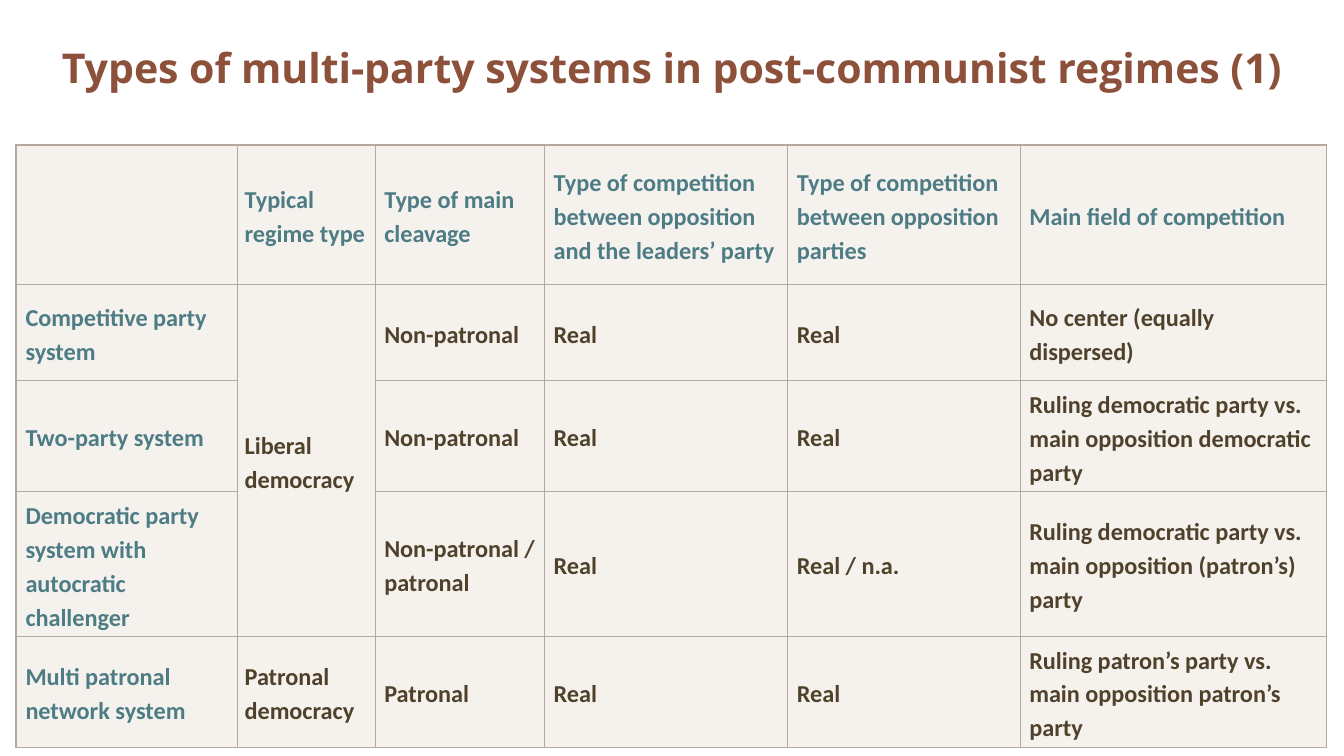
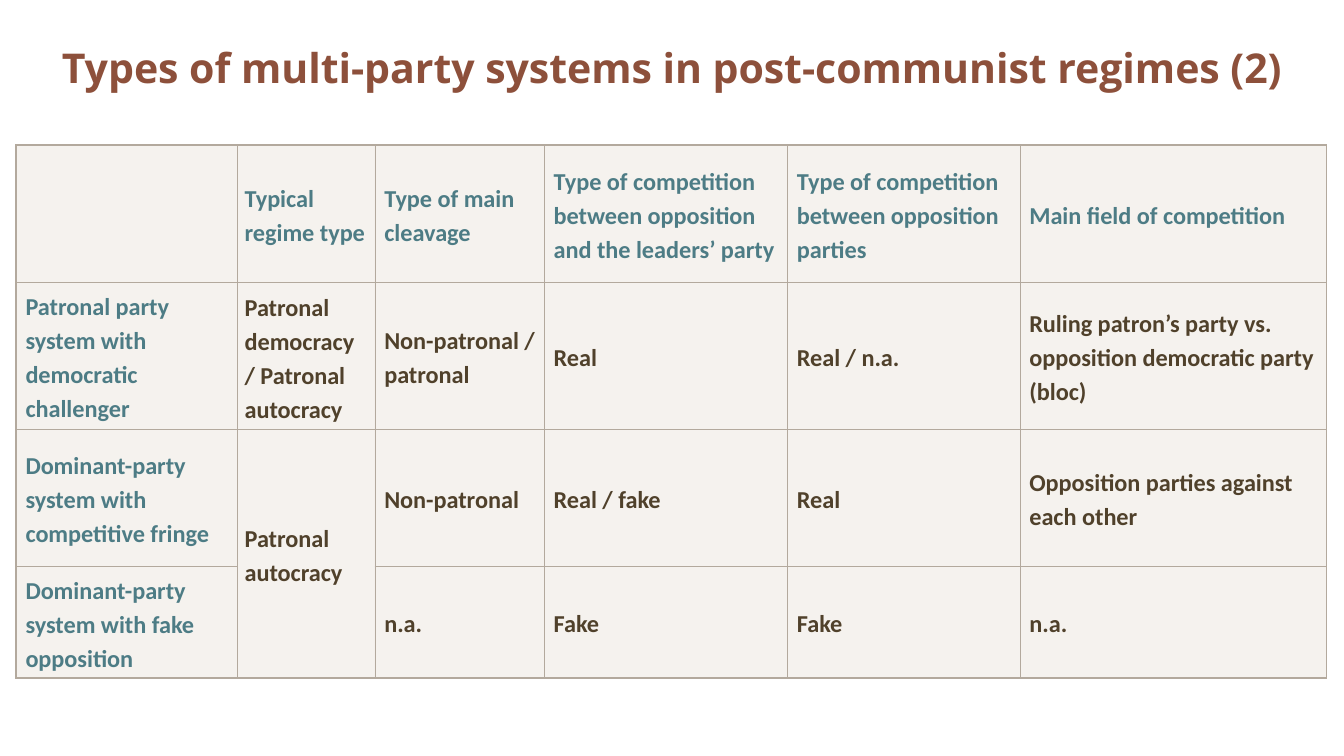
from dataclasses import dataclass

from lxml import etree
from pptx import Presentation
from pptx.dml.color import RGBColor
from pptx.enum.text import MSO_ANCHOR, PP_ALIGN
from pptx.oxml.ns import qn
from pptx.util import Inches, Pt

CENTER, LEFT = PP_ALIGN.CENTER, PP_ALIGN.LEFT
MIDDLE = MSO_ANCHOR.MIDDLE

# Shared look
RUST = RGBColor(0x8D, 0x50, 0x3B)
TEAL = RGBColor(0x4D, 0x7C, 0x85)
BROWN = RGBColor(0x50, 0x41, 0x2B)
SAND = RGBColor(0xEF, 0xEA, 0xE4)
BORDER = RGBColor(0xB3, 0xA9, 0x9D)
WHITE = RGBColor(0xFF, 0xFF, 0xFF)
TITLE_FONT, BODY_FONT = "Open Sans", "Calibri"
SAND_ALPHA = 60
OUTER, INNER = Pt(1), Pt(0.5)
PLAIN_STYLE = "{2D5ABB26-0587-4C30-8999-92F81FD0307C}"

SLIDE_W = Inches(10)
SLIDE_H = SLIDE_W * 9 // 16
MARGIN, CONTENT_W = Inches(0.12), Inches(9.76)
TABLE_TOP = Inches(1.08)
COL_WIDTHS = (1.65, 1.02, 1.26, 1.81, 1.73, 2.28)
REGIME_COL = 1
TITLE = "Types of multi-party systems in post-communist regimes ({})"
HEADER = (
    "", "Typical regime type", "Type of main cleavage",
    "Type of competition between opposition and the leaders’ party",
    "Type of competition between opposition parties",
    "Main field of competition",
)


@dataclass(frozen=True)
class PartySystem:
    name: str
    regime: str | None  # None continues the regime of the row above
    cleavage: str
    leaders: str
    opposition: str
    field: str
    height: float

    def texts(self) -> tuple:
        return (self.name, self.regime, self.cleavage, self.leaders,
                self.opposition, self.field)


@dataclass(frozen=True)
class TableSlide:
    table_height: float
    header_height: float
    systems: tuple[PartySystem, ...]


SLIDES = (
    TableSlide(4.45, 1.04, (
        PartySystem("Competitive party system", "Liberal democracy",
                    "Non-patronal", "Real", "Real",
                    "No center (equally dispersed)", 0.71),
        PartySystem("Two-party system", None, "Non-patronal", "Real", "Real",
                    "Ruling democratic party vs. main opposition democratic party",
                    0.81),
        PartySystem("Democratic party system with autocratic challenger", None,
                    "Non-patronal / patronal", "Real", "Real / n.a.",
                    "Ruling democratic party vs. main opposition (patron’s) party",
                    1.05),
        PartySystem("Multi patronal network system", "Patronal democracy",
                    "Patronal", "Real", "Real",
                    "Ruling patron’s party vs. main opposition patron’s party",
                    0.81),
    )),
    TableSlide(3.96, 1.02, (
        PartySystem("Patronal party system with democratic challenger",
                    "Patronal democracy / Patronal autocracy",
                    "Non-patronal / patronal", "Real", "Real / n.a.",
                    "Ruling patron’s party vs. opposition democratic party (bloc)",
                    1.02),
        PartySystem("Dominant-party system with competitive fringe",
                    "Patronal autocracy", "Non-patronal", "Real / fake", "Real",
                    "Opposition parties against each other", 1.02),
        PartySystem("Dominant-party system with fake opposition", None,
                    "n.a.", "Fake", "Fake", "n.a.", 0.78),
    )),
)


def write(tf, text: str, *, font: str, size: float, color: RGBColor,
          align=LEFT, spacing: float = 1.0) -> None:
    """Put one bold paragraph into a text frame."""
    tf.word_wrap = True
    p = tf.paragraphs[0]
    p.alignment, p.line_spacing = align, spacing
    r = p.add_run()
    r.text = text
    r.font.name, r.font.size, r.font.bold = font, Pt(size), True
    r.font.color.rgb = color


def add_title(s, text: str) -> None:
    sp = s.shapes.add_textbox(MARGIN, 0, CONTENT_W, Inches(1))
    sp.text_frame.vertical_anchor = MIDDLE
    write(sp.text_frame, text, font=TITLE_FONT, size=22, color=RUST, align=CENTER)


def style_cell(cell, borders: dict[str, int]) -> None:
    """Give a cell its translucent fill and its borders, keyed by L, R, T, B."""
    cell.fill.solid()
    cell.fill.fore_color.rgb = SAND
    tc_pr = cell._tc.get_or_add_tcPr()
    fill_color = tc_pr.find(f"{qn('a:solidFill')}/{qn('a:srgbClr')}")
    etree.SubElement(fill_color, qn("a:alpha"), val=str(SAND_ALPHA * 1000))
    for i, (side, width) in enumerate(borders.items()):
        ln = etree.Element(qn(f"a:ln{side}"), w=str(width))
        fill = etree.SubElement(ln, qn("a:solidFill"))
        etree.SubElement(fill, qn("a:srgbClr"), val=str(BORDER))
        tc_pr.insert(i, ln)


def fill_cell(cell, text: str, color: RGBColor, is_regime: bool) -> None:
    side, edge = (0.05, 0.05) if is_regime else (0.07, 0.04)
    cell.margin_left = cell.margin_right = Inches(side)
    cell.margin_top = cell.margin_bottom = Inches(edge)
    cell.vertical_anchor = MIDDLE
    if text:
        write(cell.text_frame, text, font=BODY_FONT, size=13, color=color,
              spacing=1.15)


def add_systems_table(s, content: TableSlide) -> None:
    rows = [HEADER] + [system.texts() for system in content.systems]
    heights = [content.header_height] + [system.height for system in content.systems]
    n_rows, n_cols = len(rows), len(HEADER)
    table_h = Inches(content.table_height)
    frame = s.shapes.add_table(n_rows, n_cols, MARGIN, TABLE_TOP, CONTENT_W, table_h)
    table = frame.table
    table.first_row = table.horz_banding = False
    table._tbl.tblPr.find(qn("a:tableStyleId")).text = PLAIN_STYLE
    for column, width in zip(table.columns, COL_WIDTHS):
        column.width = Inches(width)
    for row, height in zip(table.rows, heights):
        row.height = Inches(height)
    # Sizing rows and columns resizes the frame, so set it last
    frame.width, frame.height = CONTENT_W, table_h

    # Join each regime cell with the rows that continue it
    for r, texts in enumerate(rows):
        end = r
        while end + 1 < n_rows and rows[end + 1][REGIME_COL] is None:
            end += 1
        if end > r and texts[REGIME_COL] is not None:
            table.cell(r, REGIME_COL).merge(table.cell(end, REGIME_COL))

    for r, texts in enumerate(rows):
        for c, text in enumerate(texts):
            cell = table.cell(r, c)
            last_row = r + (cell.span_height if cell.is_merge_origin else 1)
            borders = {
                "L": OUTER if c == 0 else INNER,
                "R": OUTER if c == n_cols - 1 else INNER,
                "T": OUTER if r == 0 else INNER,
                "B": OUTER if last_row == n_rows else INNER,
            }
            if text is None:
                del borders["T"]
                if r + 1 < n_rows and rows[r + 1][c] is None:
                    del borders["B"]
            style_cell(cell, borders)
            if text is not None:
                fill_cell(cell, text, TEAL if r == 0 or c == 0 else BROWN,
                          c == REGIME_COL)


def main() -> None:
    prs = Presentation()
    prs.slide_width, prs.slide_height = SLIDE_W, SLIDE_H
    for number, content in enumerate(SLIDES, start=1):
        s = prs.slides.add_slide(prs.slide_layouts[6])
        s.background.fill.solid()
        s.background.fill.fore_color.rgb = WHITE
        add_title(s, TITLE.format(number))
        add_systems_table(s, content)
    prs.save("out.pptx")


if __name__ == "__main__":
    main()
